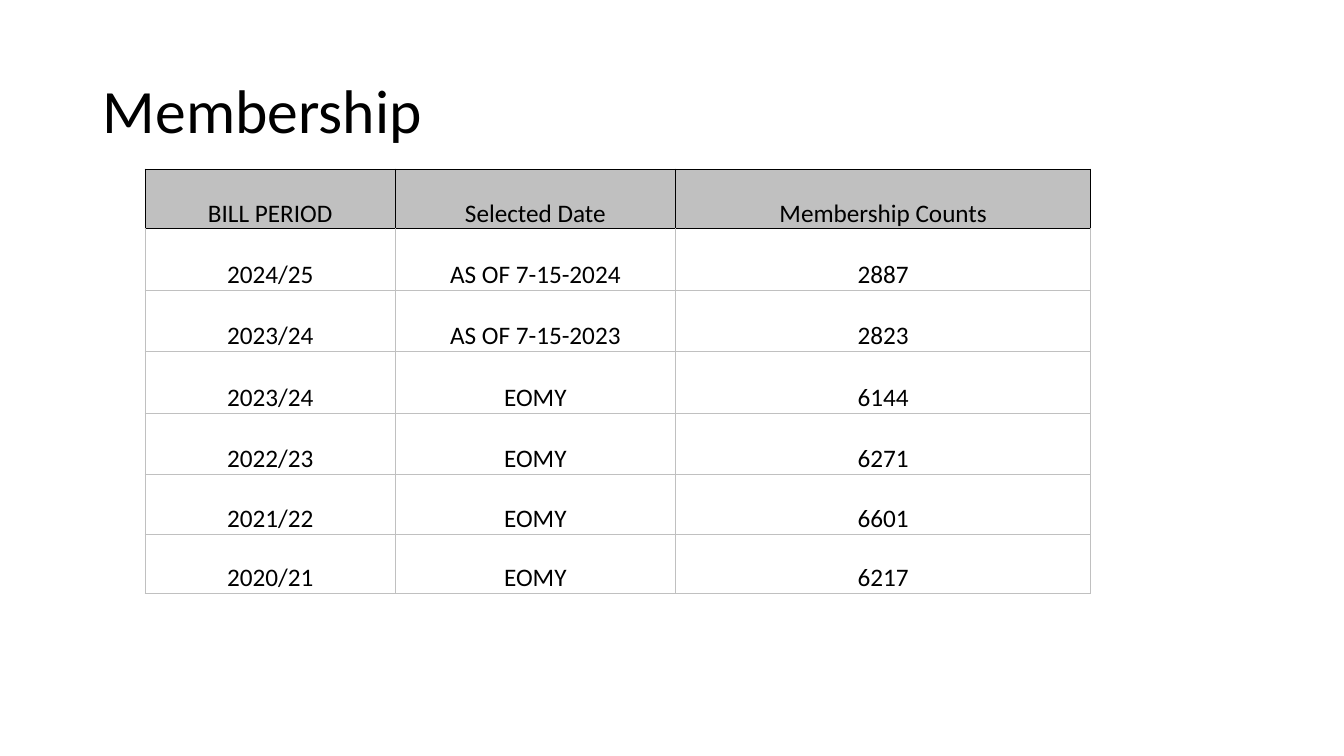
from lxml import etree
from pptx import Presentation
from pptx.dml.color import RGBColor
from pptx.enum.text import MSO_ANCHOR, MSO_AUTO_SIZE, PP_ALIGN
from pptx.oxml.ns import qn
from pptx.util import Inches, Pt

BLACK = RGBColor(0x00, 0x00, 0x00)
SILVER = RGBColor(0xC0, 0xC0, 0xC0)
LEFT, CENTER = PP_ALIGN.LEFT, PP_ALIGN.CENTER
MIDDLE, BOTTOM = MSO_ANCHOR.MIDDLE, MSO_ANCHOR.BOTTOM
NO_AUTOFIT = MSO_AUTO_SIZE.NONE
TITLE_ONLY = 5

COLUMN_WIDTHS = [2.48, 2.78, 4.12]
ROW_HEIGHTS = [0.59] + [0.61] * 4 + [0.59] * 2
MEMBERSHIP = [
    ("BILL PERIOD", "Selected Date", "Membership Counts"),
    ("2024/25", "AS OF 7-15-2024", "2887"),
    ("2023/24", "AS OF 7-15-2023", "2823"),
    ("2023/24", "EOMY", "6144"),
    ("2022/23", "EOMY", "6271"),
    ("2021/22", "EOMY", "6601"),
    ("2020/21", "EOMY", "6217"),
]


class SlideBuilder:
    """Holds the text style and the current slide, and adds elements to it."""

    def __init__(self, page, font_name, color):
        self.page = page
        self.font_name = font_name
        self.color = color

    def format_paragraph(self, para, size, align):
        para.alignment = align
        for span in para.runs:
            span.font.name = self.font_name
            span.font.size = Pt(size)
            span.font.color.rgb = self.color

    def title(self, text, left, top, width, height):
        box = self.page.shapes.title
        box.left, box.top = Inches(left), Inches(top)
        box.width, box.height = Inches(width), Inches(height)
        frame = box.text_frame
        frame.text = text
        frame.word_wrap = True
        frame.auto_size = NO_AUTOFIT
        frame.vertical_anchor = MIDDLE
        para = frame.paragraphs[0]
        para.line_spacing = 0.9
        self.format_paragraph(para, 44, LEFT)

    def border(self, cell, side, color):
        properties = cell._tc.get_or_add_tcPr()
        line = etree.SubElement(properties, qn(f"a:ln{side}"), w=str(Pt(1)))
        fill = etree.SubElement(line, qn("a:solidFill"))
        etree.SubElement(fill, qn("a:srgbClr"), val=str(color))

    def cell(self, cell, text, row):
        cell.text = text
        cell.vertical_anchor = BOTTOM
        cell.margin_left = cell.margin_right = Inches(0.07)
        cell.margin_top = cell.margin_bottom = 0
        self.format_paragraph(cell.text_frame.paragraphs[0], 18, CENTER)
        for side in "LRTB":
            dark = row == 0 or (row == 1 and side == "T")
            self.border(cell, side, BLACK if dark else SILVER)
        if row == 0:
            cell.fill.solid()
            cell.fill.fore_color.rgb = SILVER
        else:
            cell.fill.background()

    def table(self, rows, left, top, widths, heights):
        table = self.page.shapes.add_table(
            len(rows), len(widths), Inches(left), Inches(top),
            Inches(sum(widths)), Inches(sum(heights))).table
        table.first_row = table.horz_banding = False
        for column, width in zip(table.columns, widths):
            column.width = Inches(width)
        for index, (values, height) in enumerate(zip(rows, heights)):
            table.rows[index].height = Inches(height)
            for position, text in enumerate(values):
                self.cell(table.cell(index, position), text, index)


def main():
    deck = Presentation()
    deck.slide_width, deck.slide_height = Inches(13.33), Inches(7.5)
    page = deck.slides.add_slide(deck.slide_layouts[TITLE_ONLY])
    builder = SlideBuilder(page, "Calibri", BLACK)
    builder.title("Membership", 0.92, 0.4, 11.5, 1.45)
    builder.table(MEMBERSHIP, 1.44, 1.68, COLUMN_WIDTHS, ROW_HEIGHTS)
    deck.save("out.pptx")


if __name__ == "__main__":
    main()
